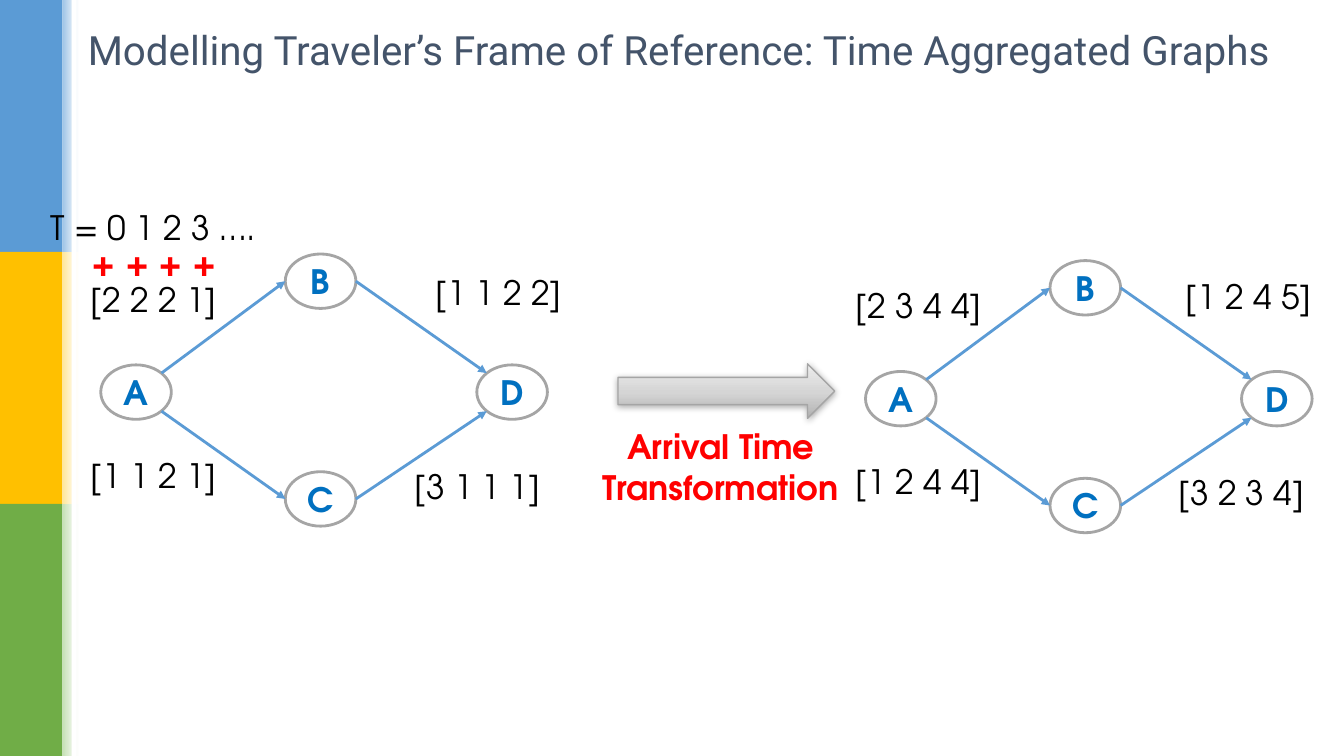
from lxml import etree
from pptx import Presentation
from pptx.dml.color import RGBColor
from pptx.enum.shapes import MSO_CONNECTOR, MSO_SHAPE
from pptx.enum.text import MSO_ANCHOR, PP_ALIGN
from pptx.oxml.ns import qn
from pptx.util import Inches, Pt

WIDTH, HEIGHT = Inches(13.33), Inches(7.5)
RECTANGLE, ELLIPSE, ARROW = MSO_SHAPE.RECTANGLE, MSO_SHAPE.OVAL, MSO_SHAPE.RIGHT_ARROW
STRAIGHT, MIDDLE = MSO_CONNECTOR.STRAIGHT, MSO_ANCHOR.MIDDLE
LEFT, CENTER = PP_ALIGN.LEFT, PP_ALIGN.CENTER

BLACK, WHITE, RED, GRAY = "000000", "FFFFFF", "FF0000", "A5A5A5"
NODE_BLUE, EDGE_BLUE, TITLE_COLOR = "0070C0", "5B9BD5", "44546A"
BANDS = [("5B9BD5", "9DC3E6"), ("FFC000", "FFE699"), ("70AD47", "C5E0B4")]
BAND_WIDTH, STRIP_WIDTH = 4.65, 1.2
NODE_WIDTH, NODE_HEIGHT = 5.25, 7.2
NODES = {"A": (7.5, 48.27), "B": (21.23, 33.6), "C": (21.23, 62.4), "D": (35.48, 48.27)}
EDGES = [
    ("A", (0.86, 0.15), "B", (0, 0.5)),
    ("A", (0.86, 0.85), "C", (0, 0.5)),
    ("B", (1, 0.5), "D", (0.14, 0.15)),
    ("C", (1, 0.5), "D", (0.14, 0.85)),
]
TRAVEL_TIMES = [
    ("[2 2 2 1]", 5.78, 36), ("[1 1 2 2]", 31.43, 35.07),
    ("[1 1 2 1]", 5.78, 59.2), ("[3 1 1 1]", 29.85, 60.67),
]
ARRIVAL_TIMES = [
    ("[2 3 4 4]", 62.7, 36.8), ("[1 2 4 5]", 87.23, 35.6),
    ("[1 2 4 4]", 62.7, 60), ("[3 2 3 4]", 86.7, 61.47),
]


def color(value):
    """Turn a hex string into a colour."""
    return RGBColor.from_string(value)


def place(left, top, width, height):
    """Turn percentages of the slide into lengths."""
    return [int(size * share / 100) for size, share in
            ((WIDTH, left), (HEIGHT, top), (WIDTH, width), (HEIGHT, height))]


def write(shape, text, size=24, font="TeX Gyre Adventor", ink=BLACK, bold=False, align=CENTER):
    """Set the text of a shape and its format."""
    frame = shape.text_frame
    frame.word_wrap = True
    frame.vertical_anchor = MIDDLE
    frame.margin_left = frame.margin_right = frame.margin_top = frame.margin_bottom = 0
    paragraph = frame.paragraphs[0]
    paragraph.alignment = align
    run = paragraph.add_run()
    run.text = text
    run.font.size, run.font.name, run.font.bold = Pt(size), font, bold
    run.font.color.rgb = color(ink)


def add_text(slide, text, box, **style):
    """Add a text box."""
    write(slide.shapes.add_textbox(*place(*box)), text, **style)


def add_block(slide, kind, box, fill=None, line=None, line_width=2):
    """Add a preset shape with a plain fill and outline."""
    shape = slide.shapes.add_shape(kind, *place(*box))
    shape.shadow.inherit = False
    if fill:
        shape.fill.solid()
        shape.fill.fore_color.rgb = color(fill)
    else:
        shape.fill.background()
    if line:
        shape.line.color.rgb = color(line)
        shape.line.width = Pt(line_width)
    else:
        shape.line.fill.background()
    return shape


def set_gradient(shape, stops, angle=0):
    """Fill a shape with a linear gradient of (percent, colour) stops."""
    shape.fill.gradient()
    shape.fill.gradient_angle = angle
    stop_list = shape._element.spPr.find(qn("a:gradFill")).find(qn("a:gsLst"))
    for stop in list(stop_list):
        stop_list.remove(stop)
    for percent, value in stops:
        stop = etree.SubElement(stop_list, qn("a:gs"), pos=str(percent * 1000))
        etree.SubElement(stop, qn("a:srgbClr"), val=value)


def set_shadow(shape, blur, distance, opacity):
    """Give a shape a soft black shadow below it."""
    effects = shape._element.spPr.find(qn("a:effectLst"))
    shadow = etree.SubElement(effects, qn("a:outerShdw"), blurRad=str(Pt(blur)),
                              dist=str(Pt(distance)), dir="5400000", rotWithShape="0")
    ink = etree.SubElement(shadow, qn("a:srgbClr"), val=BLACK)
    etree.SubElement(ink, qn("a:alpha"), val=str(opacity * 1000))


def add_edge(slide, start, end):
    """Add an arrow between two points."""
    edge = slide.shapes.add_connector(STRAIGHT, *place(*start, *end))
    edge.line.color.rgb = color(EDGE_BLUE)
    edge.line.width = Pt(2)
    etree.SubElement(edge.line._get_or_add_ln(), qn("a:tailEnd"), type="triangle")
    etree.SubElement(edge._element.spPr, qn("a:effectLst"))


def add_graph(slide, labels, shift_x=0, shift_y=0):
    """Add the four-node graph with its edge labels."""
    corners = {name: (x + shift_x, y + shift_y) for name, (x, y) in NODES.items()}

    def point(name, share):
        """Find a point inside a node's box by its shares."""
        x, y = corners[name]
        return x + share[0] * NODE_WIDTH, y + share[1] * NODE_HEIGHT

    for name, corner in corners.items():
        node = add_block(slide, ELLIPSE, (*corner, NODE_WIDTH, NODE_HEIGHT), line=GRAY)
        write(node, name, ink=NODE_BLUE, bold=True)
    for source, source_share, target, target_share in EDGES:
        add_edge(slide, point(source, source_share), point(target, target_share))
    for text, left, top in labels:
        add_text(slide, text, (left, top, 11.33, 7.2))


def add_side_bands(slide):
    """Add the coloured bands on the left with their fading strips."""
    height = 100 / len(BANDS)
    for row, (strong, pale) in enumerate(BANDS):
        add_block(slide, RECTANGLE, (0, row * height, BAND_WIDTH, height), strong)
        strip = add_block(slide, RECTANGLE, (BAND_WIDTH, row * height, STRIP_WIDTH, height))
        set_gradient(strip, [(0, pale), (100, WHITE)])
    add_block(slide, RECTANGLE, (5.33, 0, 0.38, 100), WHITE)


def add_transformation(slide):
    """Add the block arrow and its caption."""
    arrow = add_block(slide, ARROW, (45.98, 48.13, 16.13, 7.2), line=GRAY, line_width=1)
    set_gradient(arrow, [(0, "B1B1B1"), (48, "D5D5D5"), (100, "EDEDED")], angle=90)
    set_shadow(arrow, blur=5, distance=1, opacity=32)
    add_text(slide, "Arrival Time Transformation", (43.58, 56.8, 20.1, 9.87),
             ink=RED, bold=True)


def main():
    """Build the slide and save it."""
    presentation = Presentation()
    presentation.slide_width, presentation.slide_height = WIDTH, HEIGHT
    slide = presentation.slides.add_slide(presentation.slide_layouts[6])
    add_side_bands(slide)
    add_text(slide, "Modelling Traveler’s Frame of Reference: Time Aggregated Graphs",
             (6.53, 1.73, 90.7, 9.73), size=28.8, font="Roboto", ink=TITLE_COLOR, align=LEFT)
    add_transformation(slide)
    add_graph(slide, TRAVEL_TIMES)
    add_graph(slide, ARRIVAL_TIMES, shift_x=56.9, shift_y=0.87)
    add_text(slide, "T = 0 1 2 3 ….", (2.63, 26.4, 17.55, 7.2))
    add_text(slide, "+ + + +", (2.7, 31.07, 17.55, 7.2), ink=RED, bold=True)
    presentation.save("out.pptx")


if __name__ == "__main__":
    main()
